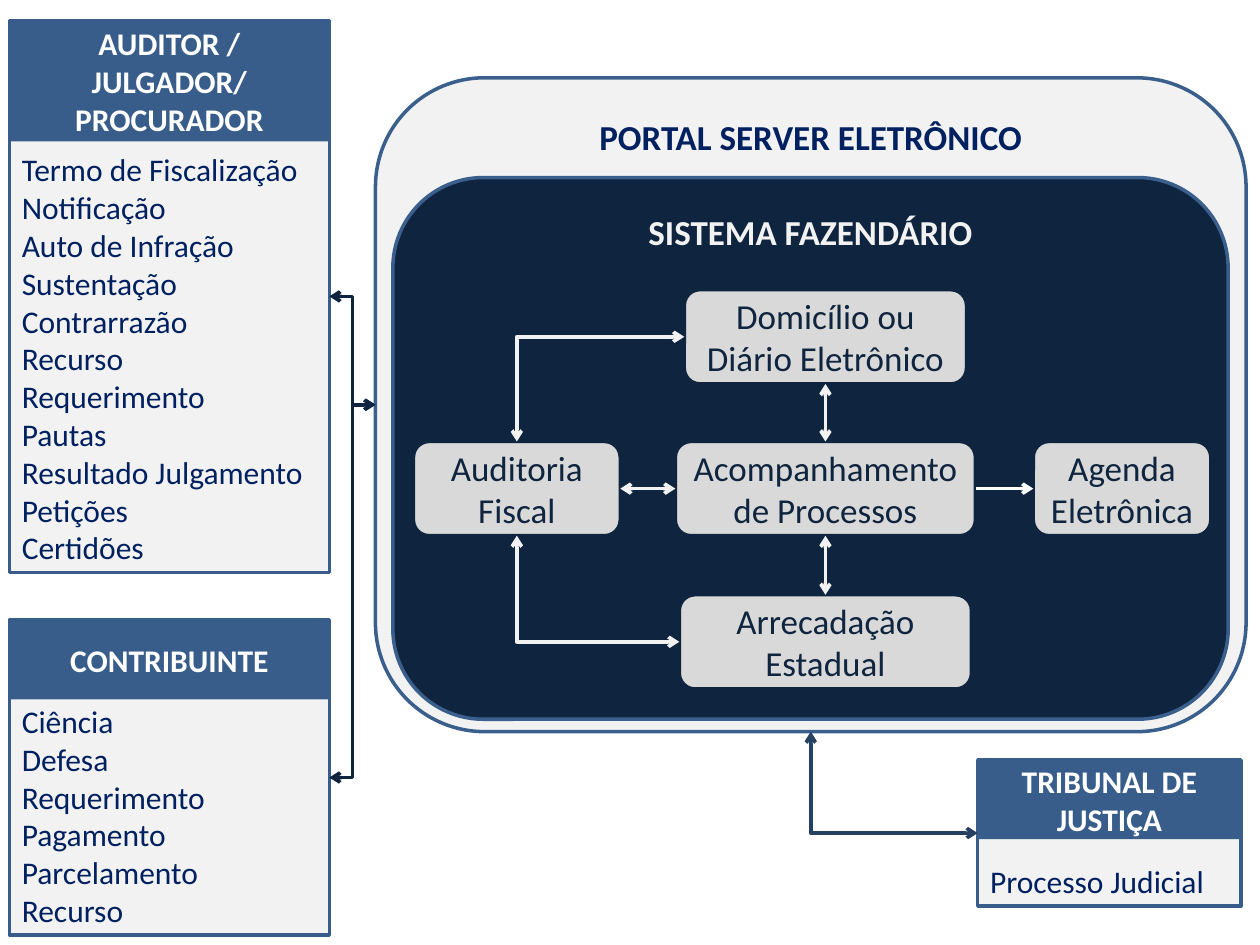
from lxml.etree import SubElement
from pptx import Presentation
from pptx.dml.color import RGBColor
from pptx.enum.shapes import MSO_CONNECTOR as Route, MSO_SHAPE as Preset
from pptx.enum.text import MSO_ANCHOR as Anchor, PP_ALIGN as Align
from pptx.oxml.ns import qn
from pptx.util import Cm, Pt

COLORS = {
    "navy": "0F243E",
    "ink": "002060",
    "slate": "254061",
    "header": "385D8A",
    "frame": "3A5F8C",
    "pale": "F2F2F2",
    "gray": "D9D9D9",
    "white": "FFFFFF",
}
TOP, LEFT, BOTTOM, RIGHT = range(4)


def color(name):
    return RGBColor.from_string(COLORS[name])


def write_text(shape, text, size=18, ink="ink", bold=False, align=Align.CENTER,
               anchor=Anchor.MIDDLE, inset=0.25, font="Calibri"):
    frame = shape.text_frame
    frame.word_wrap = True
    frame.vertical_anchor = anchor
    frame.margin_left = frame.margin_right = Cm(inset)
    frame.text = text
    for paragraph in frame.paragraphs:
        paragraph.alignment = align
        paragraph.font.name = font
        paragraph.font.size = Pt(size)
        paragraph.font.bold = bold
        paragraph.font.color.rgb = color(ink)


class Diagram:
    line_width = Pt(2)

    def __init__(self, slide):
        self.slide = slide

    def box(self, preset, left, top, width, height, fill, line=None):
        shape = self.slide.shapes.add_shape(
            preset, Cm(left), Cm(top), Cm(width), Cm(height))
        shape.shadow.inherit = False
        shape.fill.solid()
        shape.fill.fore_color.rgb = color(fill)
        if line:
            shape.line.color.rgb = color(line)
            shape.line.width = self.line_width
        else:
            shape.line.fill.background()
        return shape

    def container(self, text, left, top, width, height, fill, ink):
        shape = self.box(Preset.ROUNDED_RECTANGLE, left, top, width, height, fill, "frame")
        write_text(shape, text, size=20, ink=ink, bold=True, anchor=Anchor.TOP)
        return shape

    def process(self, text, center, top, width, height=1.9):
        shape = self.box(Preset.ROUNDED_RECTANGLE, center - width / 2, top,
                         width, height, "gray", "navy")
        write_text(shape, text, size=20, ink="navy", inset=0.15)
        return shape

    def panel(self, title, items, left, top, width, height, header_height):
        body = self.box(Preset.RECTANGLE, left, top, width, height, "pale", "header")
        write_text(body, "\n".join(items), align=Align.LEFT, anchor=Anchor.BOTTOM)
        header = self.box(Preset.RECTANGLE, left, top, width, header_height, "header")
        write_text(header, title, ink="white", bold=True)
        return body

    def arrow(self, start, start_side, end, end_side, line="pale",
              route=Route.STRAIGHT, corner=False, both=True):
        connector = self.slide.shapes.add_connector(route, 0, 0, 0, 0)
        connector.begin_connect(start, start_side)
        connector.end_connect(end, end_side)
        connector.line.color.rgb = color(line)
        connector.line.width = self.line_width
        properties = connector.element.spPr
        if corner:
            properties.find(qn("a:prstGeom")).set("prst", "bentConnector2")
        outline = properties.find(qn("a:ln"))
        for tip in ("a:headEnd", "a:tailEnd") if both else ("a:tailEnd",):
            SubElement(outline, qn(tip), type="arrow")
        SubElement(properties, qn("a:effectLst"))


def main():
    presentation = Presentation()
    presentation.slide_width, presentation.slide_height = Cm(25.4), Cm(19.05)
    slide = presentation.slides.add_slide(presentation.slide_layouts[6])
    diagram = Diagram(slide)

    portal = diagram.container("PORTAL SERVER ELETRÔNICO",
                               7.57, 1.57, 17.55, 13.18, "pale", "ink")
    diagram.container("SISTEMA FAZENDÁRIO", 7.92, 3.58, 16.84, 10.92, "navy", "pale")

    middle, row = 16.64, 8.9
    audit = diagram.process("Auditoria Fiscal", 10.42, row, 4.17)
    mailbox = diagram.process("Domicílio ou Diário Eletrônico", middle, 5.84, 5.69)
    tracking = diagram.process("Acompanhamento de Processos", middle, row, 6.05)
    agenda = diagram.process("Agenda Eletrônica", 22.62, row, 3.58)
    revenue = diagram.process("Arrecadação Estadual", middle, 11.99, 5.89)

    auditor = diagram.panel(
        "AUDITOR / JULGADOR/ PROCURADOR",
        ["Termo de Fiscalização", "Notificação", "Auto de Infração", "Sustentação",
         "Contrarrazão", "Recurso", "Requerimento", "Pautas",
         "Resultado Julgamento", "Petições", "Certidões"],
        0.19, 0.41, 6.45, 11.13, 2.44)
    taxpayer = diagram.panel(
        "CONTRIBUINTE",
        ["Ciência", "Defesa", "Requerimento", "Pagamento", "Parcelamento", "Recurso"],
        0.19, 12.5, 6.45, 6.35, 1.6)
    court = diagram.panel("TRIBUNAL DE JUSTIÇA", ["Processo Judicial"],
                          19.71, 15.32, 5.31, 2.95, 1.6)

    diagram.arrow(tracking, RIGHT, agenda, LEFT, line="white", both=False)
    diagram.arrow(tracking, LEFT, audit, RIGHT)
    diagram.arrow(mailbox, BOTTOM, tracking, TOP)
    diagram.arrow(tracking, BOTTOM, revenue, TOP)
    for panel in (auditor, taxpayer):
        diagram.arrow(panel, RIGHT, portal, LEFT, line="navy", route=Route.ELBOW)
    for start, end, side, line in (
        (mailbox, audit, TOP, "pale"),
        (revenue, audit, BOTTOM, "pale"),
        (court, portal, BOTTOM, "slate"),
    ):
        diagram.arrow(start, LEFT, end, side, line=line, route=Route.ELBOW, corner=True)

    presentation.save("out.pptx")


if __name__ == "__main__":
    main()
